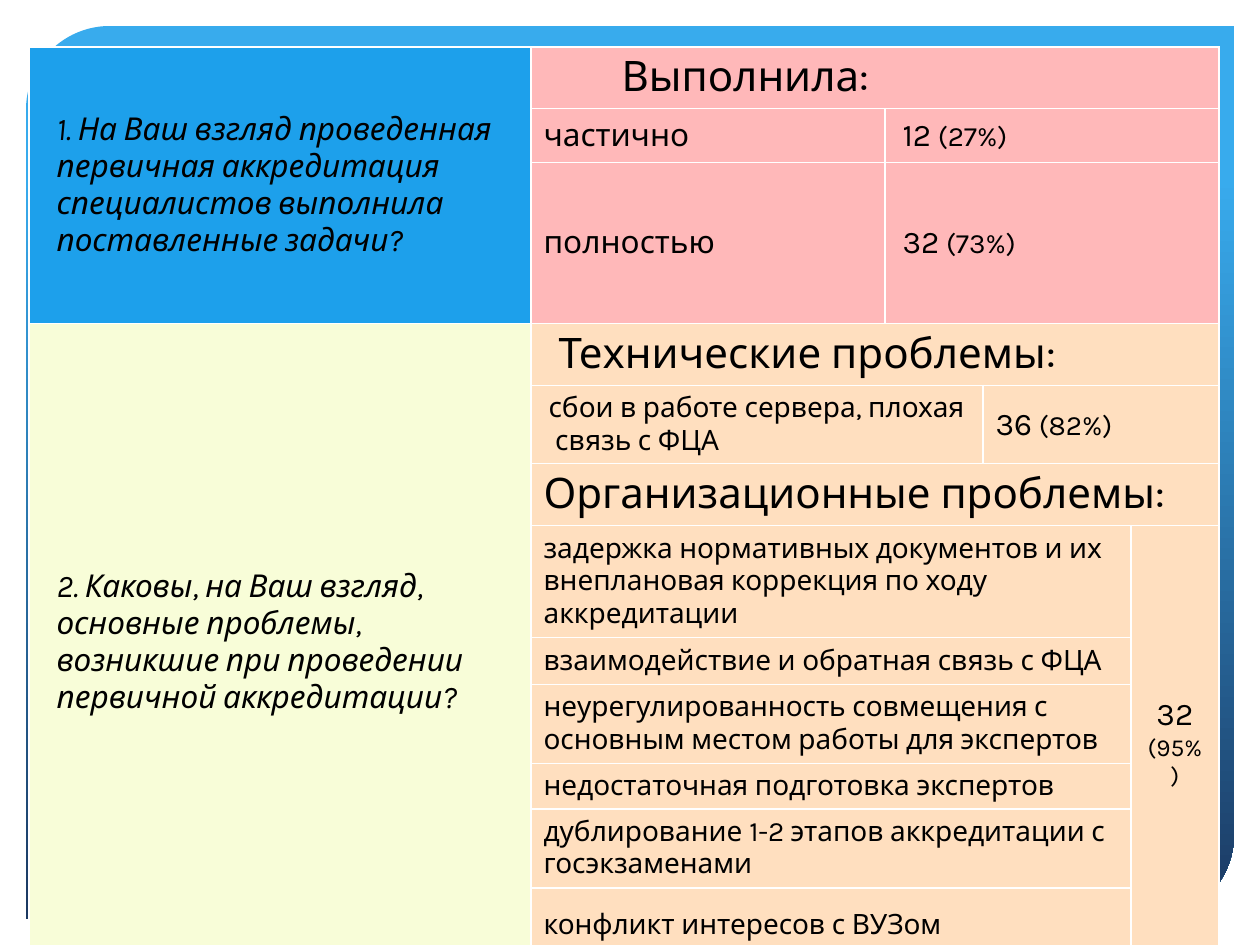
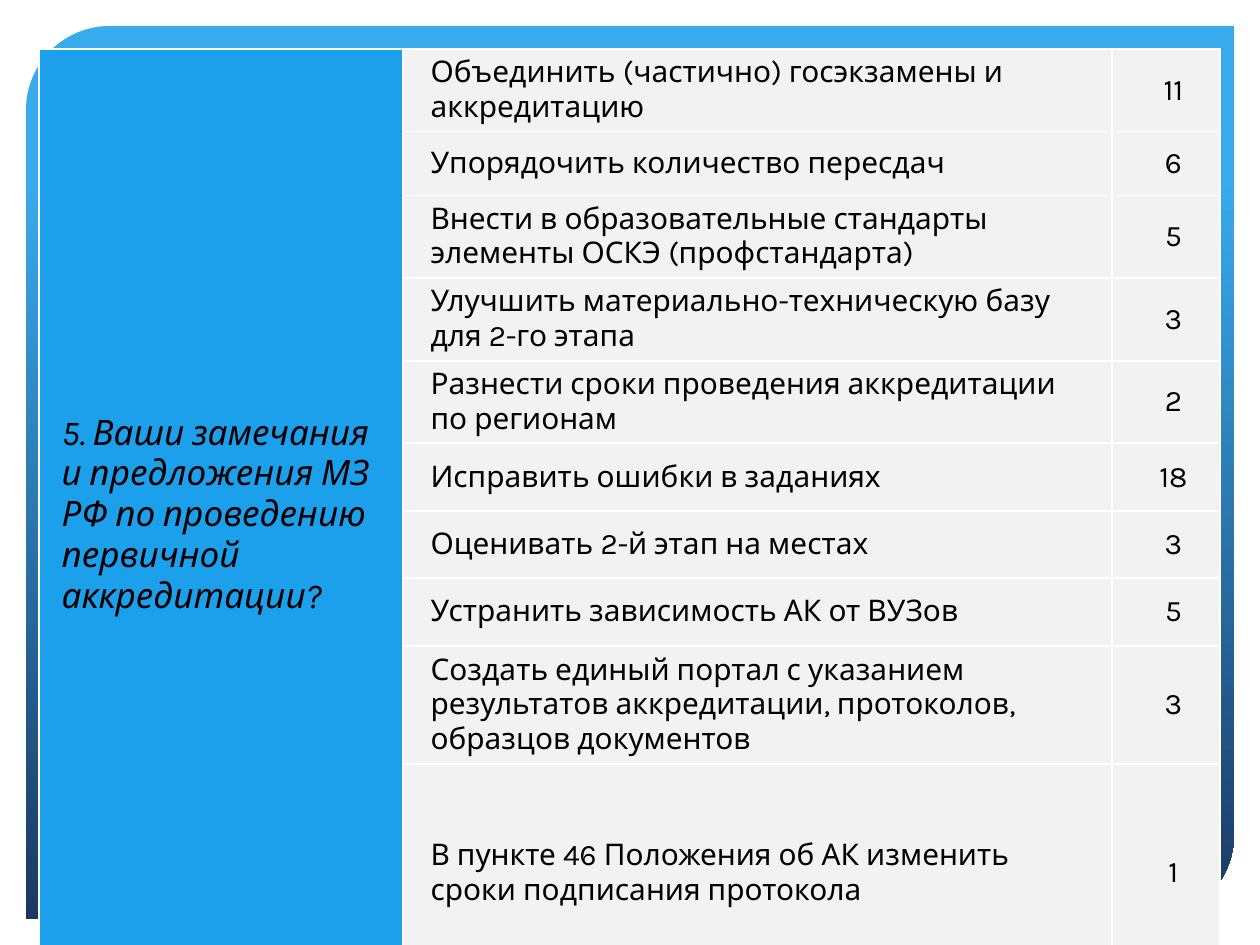
from lxml import etree
from pptx import Presentation
from pptx.dml.color import RGBColor
from pptx.enum.shapes import MSO_SHAPE
from pptx.enum.text import MSO_ANCHOR, PP_ALIGN
from pptx.oxml.ns import qn
from pptx.util import Emu, Pt

FRAME = MSO_SHAPE.ROUND_2_DIAG_RECTANGLE
TOP, MIDDLE = MSO_ANCHOR.TOP, MSO_ANCHOR.MIDDLE
LEFT, CENTER = PP_ALIGN.LEFT, PP_ALIGN.CENTER
FONT = "Karla"
BLACK, WHITE = "000000", "FFFFFF"
BLUE, PINK, LEMON, PEACH, GREY = "1DA0EB", "FFB8B9", "F8FDD8", "FFDFBF", "F2F2F2"
FRAME_TOP, FRAME_BOTTOM = "38ABED", "1B3861"
BORDERS = ("a:lnL", "a:lnR", "a:lnT", "a:lnB")

PROBLEM_ROWS = [
    "задержка нормативных документов и их внеплановая коррекция по ходу аккредитации",
    "взаимодействие и обратная связь с ФЦА",
    "неурегулированность совмещения с основным местом работы для\u00a0экспертов".replace("\u00a0", " "),
    "недостаточная подготовка экспертов",
    "дублирование 1-2 этапов аккредитации с госэкзаменами",
    "конфликт интересов с ВУЗом",
]
PROPOSALS = [
    ("Объединить (частично) госэкзамены и аккредитацию", 11),
    ("Упорядочить количество пересдач", 6),
    ("Внести в образовательные стандарты элементы ОСКЭ (профстандарта)", 5),
    ("Улучшить материально-техническую базу для 2-го этапа", 3),
    ("Разнести сроки проведения аккредитации по регионам", 2),
    ("Исправить ошибки в заданиях", 18),
    ("Оценивать 2-й этап на местах", 3),
    ("Устранить зависимость АК от ВУЗов", 5),
    ("Создать единый портал с указанием результатов аккредитации, протоколов, "
     "образцов документов", 3),
    ("В пункте 46 Положения об АК изменить сроки подписания протокола", 1),
]


def px(n):
    """Turn pixels into EMU."""
    return Emu(round(n * 914400 / 126))


def rgb(color):
    """Turn a hex string into a colour."""
    return RGBColor.from_string(color)


def add_frame(layout, slide):
    """Put the gradient frame on the layout that the slides share."""
    sp = slide.shapes.add_shape(FRAME, px(26), px(26), px(1208), px(893))
    sp.shadow.inherit = False
    sp.adjustments[0], sp.adjustments[1] = 0.094, 0
    sp.line.fill.background()
    sp.fill.gradient()
    sp.fill.gradient_angle = 270
    stops = zip(sp.fill.gradient_stops, (0.17, 1), (FRAME_TOP, FRAME_BOTTOM))
    for stop, position, color in stops:
        stop.position = position
        stop.color.rgb = rgb(color)
    layout.shapes.element.insert(2, sp.element)


def set_borders(cell):
    """Draw thin white lines on all sides of a cell."""
    tc_pr = cell._tc.get_or_add_tcPr()
    for i, tag in enumerate(BORDERS):
        ln = etree.Element(qn(tag), w=str(Pt(1)))
        fill = etree.SubElement(ln, qn("a:solidFill"))
        etree.SubElement(fill, qn("a:srgbClr"), val=WHITE)
        tc_pr.insert(i, ln)


def add_grid(slide, left, top, widths, heights):
    """Add a plain table with white borders."""
    frame = slide.shapes.add_table(len(heights), len(widths), px(left), px(top),
                                   px(sum(widths)), px(sum(heights)))
    table = frame.table
    table.first_row = table.horz_banding = False
    for column, width in zip(table.columns, widths):
        column.width = px(width)
    for row, height in zip(table.rows, heights):
        row.height = px(height)
    for cell in table.iter_cells():
        set_borders(cell)
    return table


def fill_cell(table, row, col, paragraphs, color, span=(1, 1), indent=0,
              anchor=MIDDLE, align=LEFT, italic=False):
    """Merge, colour and write a cell; a paragraph is a list of (text, size)."""
    cell = table.cell(row, col)
    if span != (1, 1):
        cell.merge(table.cell(row + span[0] - 1, col + span[1] - 1))
    cell.fill.solid()
    cell.fill.fore_color.rgb = rgb(color)
    cell.vertical_anchor = anchor
    tf = cell.text_frame
    for i, runs in enumerate(paragraphs):
        p = tf.add_paragraph() if i else tf.paragraphs[0]
        p.alignment = align
        p._p.get_or_add_pPr().set("marL", str(px(indent)))
        for text, size in runs:
            r = p.add_run()
            r.text = text
            r.font.size = Pt(size)
            r.font.name = FONT
            r.font.italic = italic
            r.font.color.rgb = rgb(BLACK)


def add_results(slide):
    """Build the table of answers to questions 1 and 2."""
    heights = [61, 54, 161, 62, 78, 62, 112, 47, 79, 45, 79, 74]
    table = add_grid(slide, 29, 47, [502, 354, 98, 148, 88], heights)
    question = "1. На Ваш взгляд проведенная первичная аккредитация специалистов выполнила поставленные задачи?"
    fill_cell(table, 0, 0, [[(question, 18)]], BLUE, (3, 1), 15, italic=True)
    fill_cell(table, 0, 1, [[("Выполнила:", 24)]], PINK, (1, 4), 78)
    answers = [("частично", "12", " (27%)"), ("полностью", "32", " (73%)")]
    for row, (label, count, share) in enumerate(answers, 1):
        fill_cell(table, row, 1, [[(label, 18)]], PINK)
        fill_cell(table, row, 2, [[(count, 18), (share, 16)]], PINK, (1, 3), 5)

    question = "2. Каковы, на Ваш взгляд, основные проблемы, возникшие при проведении первичной аккредитации?"
    fill_cell(table, 3, 0, [[(question, 18)]], LEMON, (9, 1), 15, italic=True)
    fill_cell(table, 3, 1, [[("Технические проблемы:", 24)]], PEACH, (1, 4), 15, TOP)
    fill_cell(table, 4, 1, [[("сбои в работе сервера, плохая\u00a0 связь с ФЦА".replace("\u00a0 ", "  "), 16)]],
              PEACH, (1, 2), 5, TOP)
    fill_cell(table, 4, 3, [[("36", 18), (" (82%)", 16)]], PEACH, (1, 2))
    fill_cell(table, 5, 1, [[("Организационные проблемы:", 24)]], PEACH, (1, 4), 0, TOP)
    for row, problem in enumerate(PROBLEM_ROWS, 6):
        fill_cell(table, row, 1, [[(problem, 16)]], PEACH, (1, 3))
    fill_cell(table, 6, 4, [[("32", 18)], [("(95%)", 14)]], PEACH, (6, 1), align=CENTER)


def add_proposals(slide):
    """Build the table of proposals for question 5."""
    heights = [82, 64, 82, 83, 82, 68, 67, 68, 118, 216]
    table = add_grid(slide, 39, 49, [364, 709, 108], heights)
    question = "5. Ваши замечания и предложения МЗ РФ по проведению первичной аккредитации?"
    fill_cell(table, 0, 0, [[(question, 20)]], BLUE, (len(heights), 1), 10, italic=True)
    for row, (proposal, votes) in enumerate(PROPOSALS):
        fill_cell(table, row, 1, [[(proposal, 17)]], GREY, indent=15)
        fill_cell(table, row, 2, [[(str(votes), 17)]], GREY, indent=15, align=CENTER)


def main():
    """Build both slides and save them."""
    prs = Presentation()
    prs.slide_width, prs.slide_height = px(1260), px(945)
    layout = prs.slide_layouts[6]
    results, proposals = (prs.slides.add_slide(layout) for _ in range(2))
    add_frame(layout, results)
    add_results(results)
    add_proposals(proposals)
    prs.save("out.pptx")


if __name__ == "__main__":
    main()
